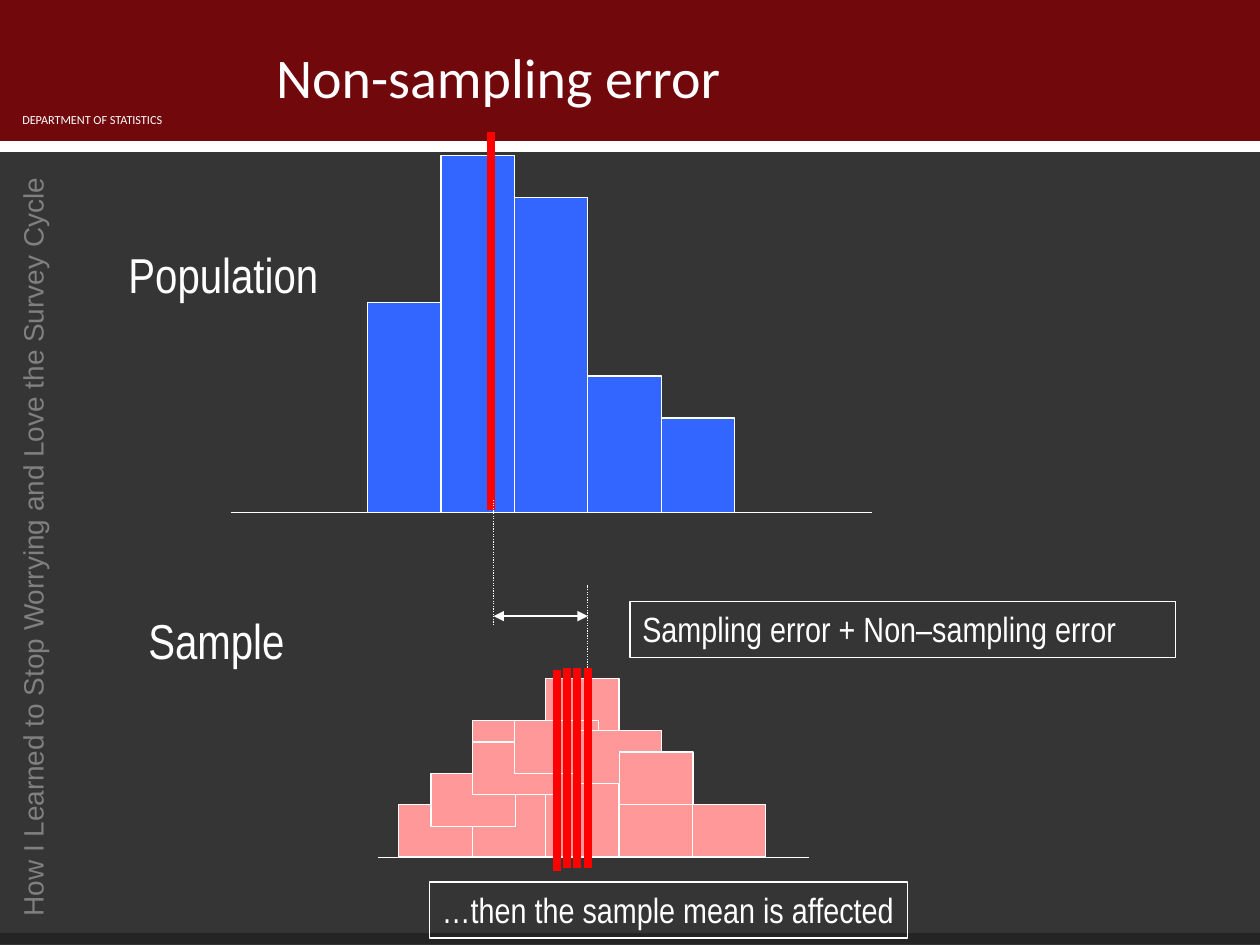
import pptx
import pptx.dml.color
import pptx.enum.dml
import pptx.enum.shapes
import pptx.enum.text
import pptx.oxml.ns
import lxml.etree
from pptx.util import Cm

RGBColor = pptx.dml.color.RGBColor
WHITE = RGBColor(0xFF, 0xFF, 0xFF)
GREY = RGBColor(0x80, 0x80, 0x80)
CHARCOAL = RGBColor(0x35, 0x35, 0x35)
FOOTER_DARK = RGBColor(0x24, 0x24, 0x24)
MAROON = RGBColor(0x71, 0x08, 0x0C)
BLUE = RGBColor(0x33, 0x66, 0xFF)
PINK = RGBColor(0xFF, 0x99, 0x99)
RED = RGBColor(0xFF, 0x00, 0x00)

BAR_WIDTH = 1.48
BLOCK_WIDTH, BLOCK_HEIGHT = 1.7, 1.06
POPULATION_BASE, SAMPLE_BASE = 10.33, 17.28
POPULATION_MEAN, SAMPLE_MEAN = 9.95, 11.85


def add_rectangle(page, left, top, width, height, fill=None, outline=None):
    box = page.shapes.add_shape(
        pptx.enum.shapes.MSO_SHAPE.RECTANGLE,
        Cm(left), Cm(top), Cm(width), Cm(height))
    box.shadow.inherit = False
    if fill is None:
        box.fill.background()
    else:
        box.fill.solid()
        box.fill.fore_color.rgb = fill
    if outline is None:
        box.line.fill.background()
    else:
        box.line.color.rgb = outline
        box.line.width = pptx.util.Pt(0.75)
    return box


def add_line(page, start, end, color=WHITE, width=0.75, dotted=False, arrows=False):
    line = page.shapes.add_connector(
        pptx.enum.shapes.MSO_CONNECTOR.STRAIGHT,
        Cm(start[0]), Cm(start[1]), Cm(end[0]), Cm(end[1]))
    line.line.color.rgb = color
    line.line.width = pptx.util.Pt(width)
    if dotted:
        line.line.dash_style = pptx.enum.dml.MSO_LINE.ROUND_DOT
    if arrows:
        outline = line.line._get_or_add_ln()
        for end_name in ("a:headEnd", "a:tailEnd"):
            lxml.etree.SubElement(
                outline, pptx.oxml.ns.qn(end_name), type="triangle")
    properties = line._element.spPr
    lxml.etree.SubElement(properties, pptx.oxml.ns.qn("a:effectLst"))


def write_text(box, text, size, font="Arial Narrow", color=WHITE, align="LEFT",
               anchor="TOP", wrap=True):
    frame = box.text_frame
    frame.word_wrap = wrap
    frame.vertical_anchor = getattr(pptx.enum.text.MSO_ANCHOR, anchor)
    para = frame.paragraphs[0]
    para.alignment = getattr(pptx.enum.text.PP_ALIGN, align)
    span = para.add_run()
    span.text = text
    span.font.size = pptx.util.Pt(size)
    span.font.name = font
    span.font.color.rgb = color


def add_label(page, left, top, width, height, text, size, **style):
    box = page.shapes.add_textbox(Cm(left), Cm(top), Cm(width), Cm(height))
    write_text(box, text, size, **style)
    return box


def add_bars(page, left, base, heights, fill):
    for index, height in enumerate(heights):
        add_rectangle(page, left + index * BAR_WIDTH, base - height,
                      BAR_WIDTH, height, fill, WHITE)


def add_frame(page):
    # Background, banner and side text
    add_rectangle(page, 0, 3.02, 25.4, 16.03, CHARCOAL)
    add_rectangle(page, 0, 0, 25.4, 2.95, MAROON)
    add_line(page, (0, 2.95), (25.4, 2.95), WHITE, 6)
    side = add_label(page, -7.14, 10.67, 15.6, 0.94,
                     "How I Learned to Stop Worrying and Love the Survey Cycle",
                     16, font="Arial", color=GREY, align="RIGHT")
    side.rotation = 270
    add_line(page, (0, 18.92), (25.4, 18.92), FOOTER_DARK, 6)
    add_label(page, 0.2, 2.13, 4.09, 0.56, "DEPARTMENT OF STATISTICS", 7,
              font="Calibri")


def add_title(page):
    title = page.shapes.title
    title.left, title.top = Cm(5.31), Cm(0.33)
    title.width, title.height = Cm(20.09), Cm(2.39)
    write_text(title, "Non-sampling error", 32, font="Calibri", anchor="MIDDLE")
    # Bring the title in front of the banner
    page.shapes._spTree.append(title._element)


def add_population(page):
    add_line(page, (4.65, POPULATION_BASE), (17.58, POPULATION_BASE))
    add_bars(page, 7.41, POPULATION_BASE, (4.23, 7.2, 6.35, 2.75, 1.9), BLUE)
    add_line(page, (9.9, 2.67), (9.9, 10.29), RED, 4.5)
    add_label(page, 2.34, 4.8, 4.34, 1.45, "Population", 28, wrap=False)


def add_sample(page):
    add_bars(page, 8.04, SAMPLE_BASE, (1.06, 2.75, 3.6, 1.06, 1.06), PINK)
    add_line(page, (7.62, SAMPLE_BASE), (16.3, SAMPLE_BASE))
    # Shifted observations
    for left, top in ((8.69, 15.6), (9.53, 14.96), (10.37, 14.53), (11.64, 14.73)):
        add_rectangle(page, left, top, BLOCK_WIDTH, BLOCK_HEIGHT, PINK, WHITE)
    add_rectangle(page, 12.49, 15.16, BAR_WIDTH, BLOCK_HEIGHT, PINK, WHITE)
    # Sample mean drifting left
    for step in range(3):
        left = SAMPLE_MEAN - step * 0.21
        add_line(page, (left, 13.46), (left, 17.5), RED, 4.5)
    add_line(page, (11.23, 13.51), (11.23, 17.55), RED, 4.5)
    add_label(page, 2.74, 12.19, 3.25, 1.45, "Sample", 28, wrap=False)


def add_error_gap(page):
    add_line(page, (POPULATION_MEAN, 10.08), (POPULATION_MEAN, 12.62), dotted=True)
    add_line(page, (POPULATION_MEAN, 12.42), (SAMPLE_MEAN, 12.42), arrows=True)
    add_line(page, (SAMPLE_MEAN, 13.46), (SAMPLE_MEAN, 11.79), dotted=True)


def add_captions(page):
    error_box = add_rectangle(page, 12.7, 12.12, 11, 1.13, outline=WHITE)
    write_text(error_box, "Sampling error + Non–sampling error", 20)
    mean_box = add_rectangle(page, 8.66, 17.78, 9.63, 1.13, outline=WHITE)
    write_text(mean_box, "…then the sample mean is affected", 20, wrap=False)


def main():
    deck = pptx.Presentation()
    deck.slide_width, deck.slide_height = Cm(25.4), Cm(19.05)
    page = deck.slides.add_slide(deck.slide_layouts[5])
    add_frame(page)
    add_title(page)
    add_population(page)
    add_sample(page)
    add_error_gap(page)
    add_captions(page)
    deck.save("out.pptx")


if __name__ == "__main__":
    main()
